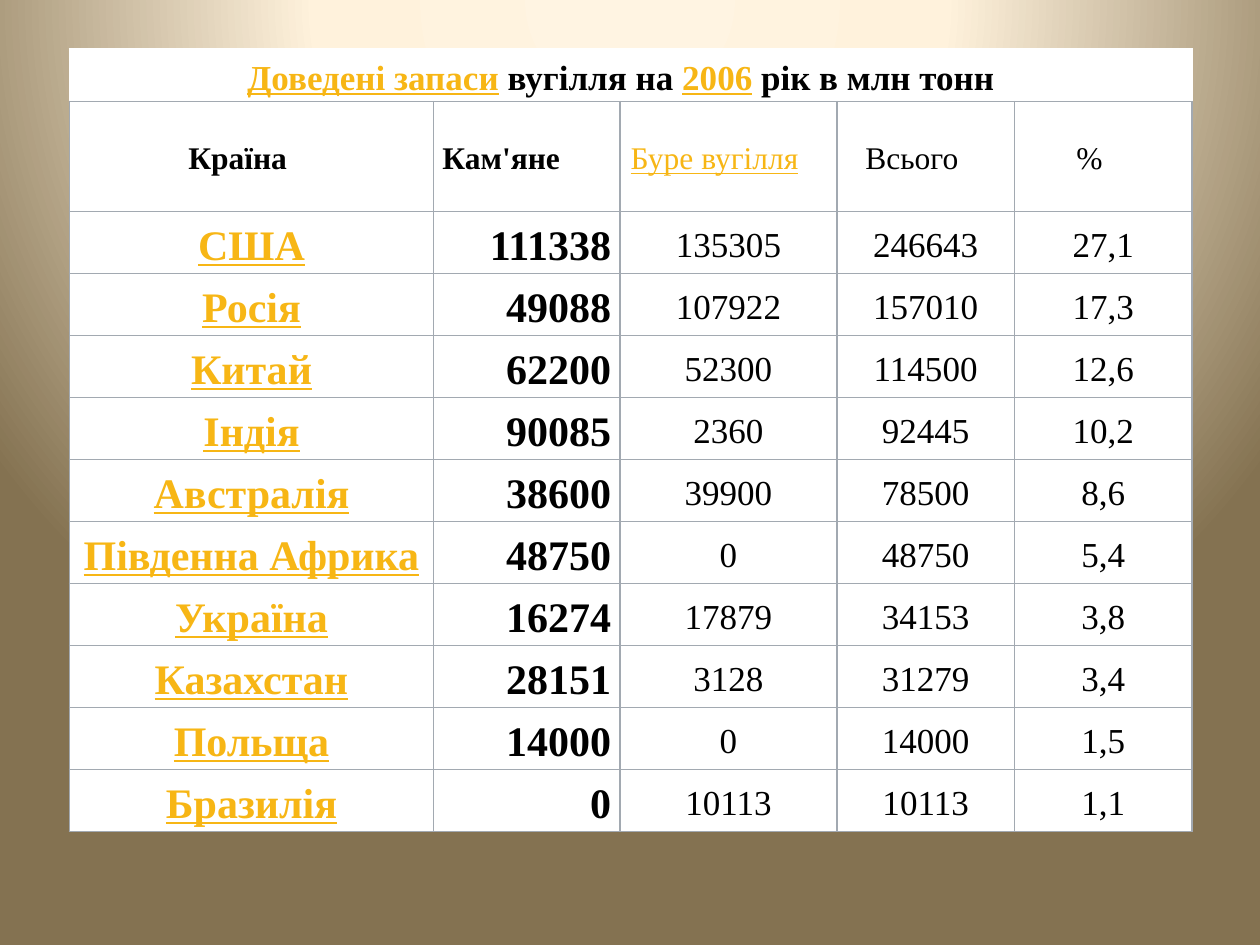
import dataclasses

import pptx
import pptx.dml.color
import pptx.enum.text
import pptx.oxml
import pptx.oxml.ns
import pptx.util

Cm = pptx.util.Cm
Pt = pptx.util.Pt
ALIGN = pptx.enum.text.PP_ALIGN


@dataclasses.dataclass(frozen=True)
class Theme:
    font: str = "Times New Roman"
    text: str = "000000"
    link: str = "F7B615"
    cell: str = "FFFFFF"
    border: str = "A2A9B1"
    gradient: tuple = ((0, "FFF4E2"), (40, "FFF2DC"), (100, "847251"))
    header_size: int = 18
    value_size: int = 20
    country_size: int = 24


class SlideBuilder:
    """Holds the theme and the slide being filled."""

    def __init__(self, theme, slide):
        self.theme = theme
        self.slide = slide

    def background(self):
        stops = "".join(
            f'<a:gs pos="{place * 1000}"><a:srgbClr val="{color}"/></a:gs>'
            for place, color in self.theme.gradient
        )
        self.slide.element.cSld.insert(0, pptx.oxml.parse_xml(
            f'<p:bg {pptx.oxml.ns.nsdecls("p", "a")}><p:bgPr>'
            f'<a:gradFill rotWithShape="1"><a:gsLst>{stops}</a:gsLst>'
            '<a:path path="circle">'
            '<a:fillToRect l="50000" t="-80000" r="50000" b="180000"/>'
            '</a:path></a:gradFill><a:effectLst/></p:bgPr></p:bg>'
        ))

    def table(self, left, top, widths, heights):
        frame = self.slide.shapes.add_table(
            len(heights), len(widths), left, top, sum(widths), sum(heights))
        table = frame.table
        table.first_row = table.horz_banding = False
        for column, width in zip(table.columns, widths):
            column.width = width
        for row, height in zip(table.rows, heights):
            row.height = height
        return table

    def borders(self, cell, sides):
        properties = cell._tc.get_or_add_tcPr()
        for side in sides:
            properties.append(pptx.oxml.parse_xml(
                f'<a:ln{side} {pptx.oxml.ns.nsdecls("a")} w="12700"><a:solidFill>'
                f'<a:srgbClr val="{self.theme.border}"/></a:solidFill></a:ln{side}>'
            ))

    def cell(self, cell, spans, size, bold=False, align=ALIGN.CENTER,
             right=Cm(0.18), after=Pt(0), sides="LRTB"):
        """Fill a cell; spans are (text, is_link) pairs."""
        self.borders(cell, sides)
        cell.fill.solid()
        cell.fill.fore_color.rgb = pptx.dml.color.RGBColor.from_string(self.theme.cell)
        cell_format = {
            "vertical_anchor": pptx.enum.text.MSO_ANCHOR.MIDDLE,
            "margin_left": Cm(0.18), "margin_right": right,
            "margin_top": Cm(0.08), "margin_bottom": Cm(0.08),
        }
        para = cell.text_frame.paragraphs[0]
        para_format = {"alignment": align, "line_spacing": 1.15, "space_after": after}
        self.apply(cell, cell_format)
        self.apply(para, para_format)
        for text, is_link in spans:
            span = para.add_run()
            span.text = text
            self.apply(span.font, {"name": self.theme.font, "size": Pt(size),
                                   "bold": bold, "underline": is_link})
            color = self.theme.link if is_link else self.theme.text
            span.font.color.rgb = pptx.dml.color.RGBColor.from_string(color)

    @staticmethod
    def apply(target, values):
        for name, value in values.items():
            setattr(target, name, value)


TITLE = [("Доведені запаси", True), (" вугілля на ", False),
         ("2006", True), (" рік в млн тонн", False)]

# Spans, bold, alignment, space after
HEADERS = [
    ([("Країна ", False)], True, ALIGN.CENTER, Pt(0)),
    ([("Кам'яне", False)], True, ALIGN.LEFT, Pt(10)),
    ([("Буре вугілля", True), (" ", False)], False, ALIGN.CENTER, Pt(10)),
    ([("Всього ", False)], False, ALIGN.CENTER, Pt(10)),
    ([("% ", False)], False, ALIGN.CENTER, Pt(10)),
]

RESERVES = [
    ("США", "111338", "135305", "246643", "27,1"),
    ("Росія", "49088", "107922", "157010", "17,3"),
    ("Китай", "62200", "52300", "114500", "12,6"),
    ("Індія", "90085", "2360", "92445", "10,2"),
    ("Австралія", "38600", "39900", "78500", "8,6"),
    ("Південна Африка", "48750", "0", "48750", "5,4"),
    ("Україна", "16274", "17879", "34153", "3,8"),
    ("Казахстан", "28151", "3128", "31279", "3,4"),
    ("Польща", "14000", "0", "14000", "1,5"),
    ("Бразилія", "0", "10113", "10113", "1,1"),
]


def main():
    deck = pptx.Presentation()
    deck.slide_width, deck.slide_height = Cm(25.4), Cm(19.05)
    theme = Theme()
    page = SlideBuilder(theme, deck.slides.add_slide(deck.slide_layouts[6]))
    page.background()

    widths = [Cm(width) for width in (7.34, 3.76, 4.37, 3.58, 3.58)]
    heights = [Cm(0.79), Cm(2.21)] + [Cm(1.25)] * len(RESERVES)
    table = page.table(Cm(1.4), Cm(0.99), widths, heights)
    wide_margin = Cm(0.58)

    # Title row across all columns
    table.cell(0, 0).merge(table.cell(0, len(widths) - 1))
    page.cell(table.cell(0, 0), TITLE, theme.value_size, bold=True,
              right=wide_margin, sides="B")
    for column in range(1, len(widths)):
        page.borders(table.cell(0, column), "B")

    # Column headings
    for column, (spans, bold, align, after) in enumerate(HEADERS):
        page.cell(table.cell(1, column), spans, theme.header_size, bold, align,
                  right=wide_margin, after=after)

    # Country rows: linked name, bold hard coal, then plain values
    styles = [(theme.country_size, True, ALIGN.CENTER),
              (theme.country_size, True, ALIGN.RIGHT)]
    styles += [(theme.value_size, False, ALIGN.CENTER)] * 3
    for row, values in enumerate(RESERVES, start=2):
        for column, (value, style) in enumerate(zip(values, styles)):
            page.cell(table.cell(row, column), [(value, column == 0)], *style)

    deck.save("out.pptx")


if __name__ == "__main__":
    main()
